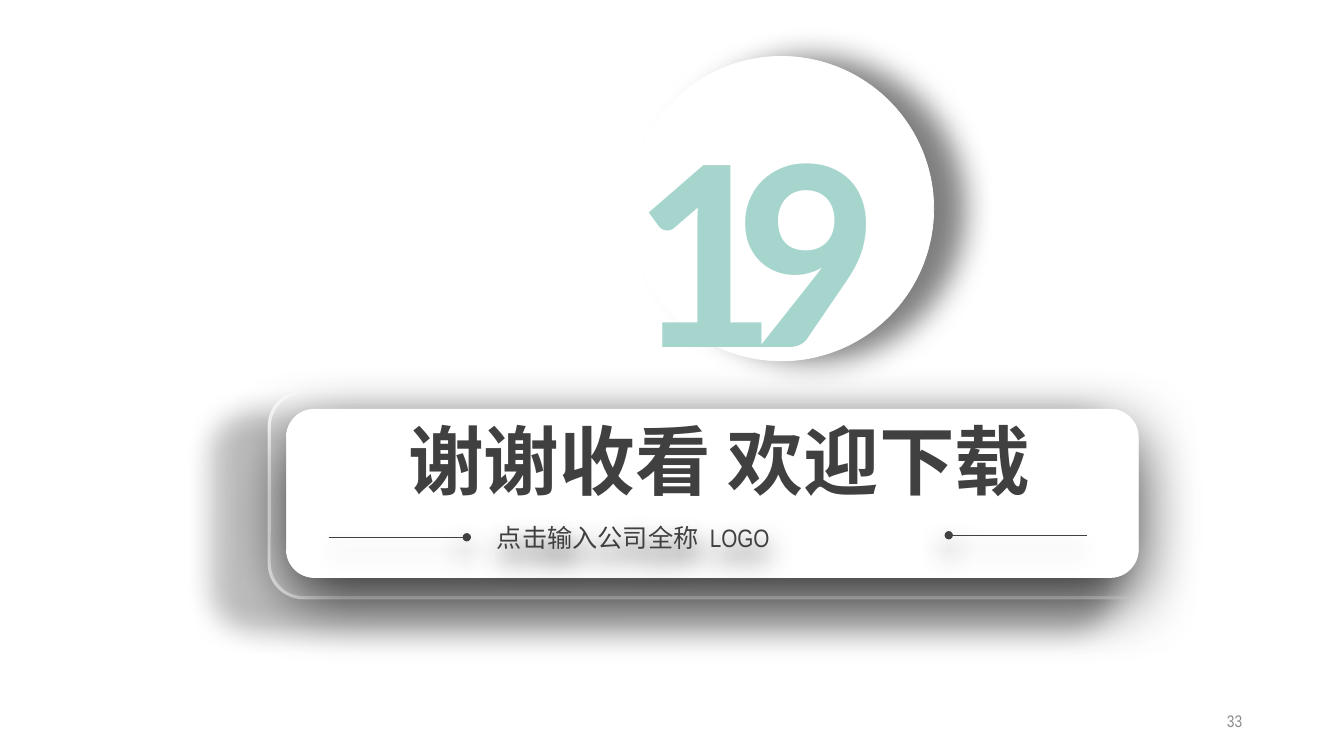
"""Build the closing thank-you slide."""
from lxml.etree import SubElement
from pptx import Presentation
from pptx.dml.color import RGBColor
from pptx.enum.shapes import MSO_CONNECTOR, MSO_SHAPE
from pptx.enum.text import MSO_ANCHOR, MSO_AUTO_SIZE, PP_ALIGN
from pptx.oxml.ns import qn
from pptx.util import Inches, Pt

COLORS = {"white": "FFFFFF", "ink": "404040", "mint": "A5D5CC",
          "gray": "8C8C8C", "shadow": "000000"}
SOFT_SHADOW = (88, 19, 10, 90)


def rgb(name):
    return RGBColor.from_string(COLORS[name])


def add_shadow(shape, opacity, blur, distance, angle):
    effects = SubElement(shape.element.spPr, qn("a:effectLst"))
    outer = SubElement(effects, qn("a:outerShdw"), blurRad=str(Pt(blur)),
                       dist=str(Pt(distance)), dir=str(angle * 60000),
                       algn="ctr", rotWithShape="0")
    tint = SubElement(outer, qn("a:srgbClr"), val=COLORS["shadow"])
    SubElement(tint, qn("a:alpha"), val=str(opacity * 1000))


def add_panel(slide, preset, box, line_width, shadow, opacity=100):
    panel = slide.shapes.add_shape(preset, *map(Inches, box))
    panel.fill.solid()
    panel.fill.fore_color.rgb = rgb("white")
    if opacity < 100:
        tint = panel.element.spPr.find(qn("a:solidFill"))[0]
        SubElement(tint, qn("a:alpha"), val=str(opacity * 1000))
    panel.line.color.rgb = rgb("white")
    panel.line.width = Pt(line_width)
    add_shadow(panel, *shadow)


def add_rule(slide, left, y, dot_end):
    rule = slide.shapes.add_connector(
        MSO_CONNECTOR.STRAIGHT, Inches(left), Inches(y),
        Inches(left + 1.37), Inches(y))
    rule.line.color.rgb = rgb("ink")
    rule.line.width = Pt(0.5)
    SubElement(rule.line._get_or_add_ln(), qn(f"a:{dot_end}"), type="oval")
    add_shadow(rule, *SOFT_SHADOW)


def set_text(holder, text, size, font, color, align=PP_ALIGN.LEFT,
             anchor=MSO_ANCHOR.TOP, bold=False, wrap=True):
    frame = holder.text_frame
    frame.text = text
    frame.word_wrap = wrap
    frame.auto_size = MSO_AUTO_SIZE.NONE
    frame.vertical_anchor = anchor
    paragraph = frame.paragraphs[0]
    paragraph.alignment = align
    run = paragraph.runs[0]
    run.font.size = Pt(size)
    run.font.name = font
    run.font.bold = bold
    run.font.color.rgb = rgb(color)
    return run


def add_label(slide, box, *args, **options):
    label = slide.shapes.add_textbox(*map(Inches, box))
    return label, set_text(label, *args, **options)


def add_title(slide, box, text):
    title = slide.shapes.title
    title.left, title.top, title.width, title.height = map(Inches, box)
    set_text(title, text, 54, "Arial Narrow", "ink", bold=True, wrap=False)
    tree = slide.shapes._spTree
    tree.remove(title.element)
    tree.append(title.element)


def main():
    deck = Presentation()
    deck.slide_width, deck.slide_height = Inches(13.33), Inches(7.5)
    slide = deck.slides.add_slide(deck.slide_layouts[5])

    add_panel(slide, MSO_SHAPE.ROUNDED_RECTANGLE, (2.67, 3.89, 8.82, 2.04),
              2.25, (71, 21, 42, 153), opacity=34)
    add_panel(slide, MSO_SHAPE.ROUNDED_RECTANGLE, (2.84, 4.06, 8.45, 1.67),
              0.5, (78, 49, 16, 90))
    add_rule(slide, 9.41, 5.31, "headEnd")
    add_title(slide, (3.95, 4.06, 6.39, 1.01), "谢谢收看 欢迎下载")
    add_rule(slide, 3.26, 5.33, "tailEnd")
    company, _ = add_label(slide, (4.83, 5.13, 4.37, 0.4),
                           "点击输入公司全称  LOGO", 18, "Arial Narrow", "ink",
                           align=PP_ALIGN.JUSTIFY)
    add_shadow(company, *SOFT_SHADOW)
    add_label(slide, (9.42, 6.95, 3, 0.4), "33", 12, "Arial Narrow", "gray",
              align=PP_ALIGN.RIGHT, anchor=MSO_ANCHOR.MIDDLE)

    add_panel(slide, MSO_SHAPE.OVAL, (6.24, 0.56, 3.02, 3.02),
              0.5, (49, 22, 22, 0))
    _, number = add_label(slide, (6.16, 0.62, 3.16, 3.47), "19", 200,
                          "Calibri", "mint", bold=True, wrap=False)
    number.font._element.set("spc", "-3000")

    deck.save("out.pptx")


if __name__ == "__main__":
    main()
